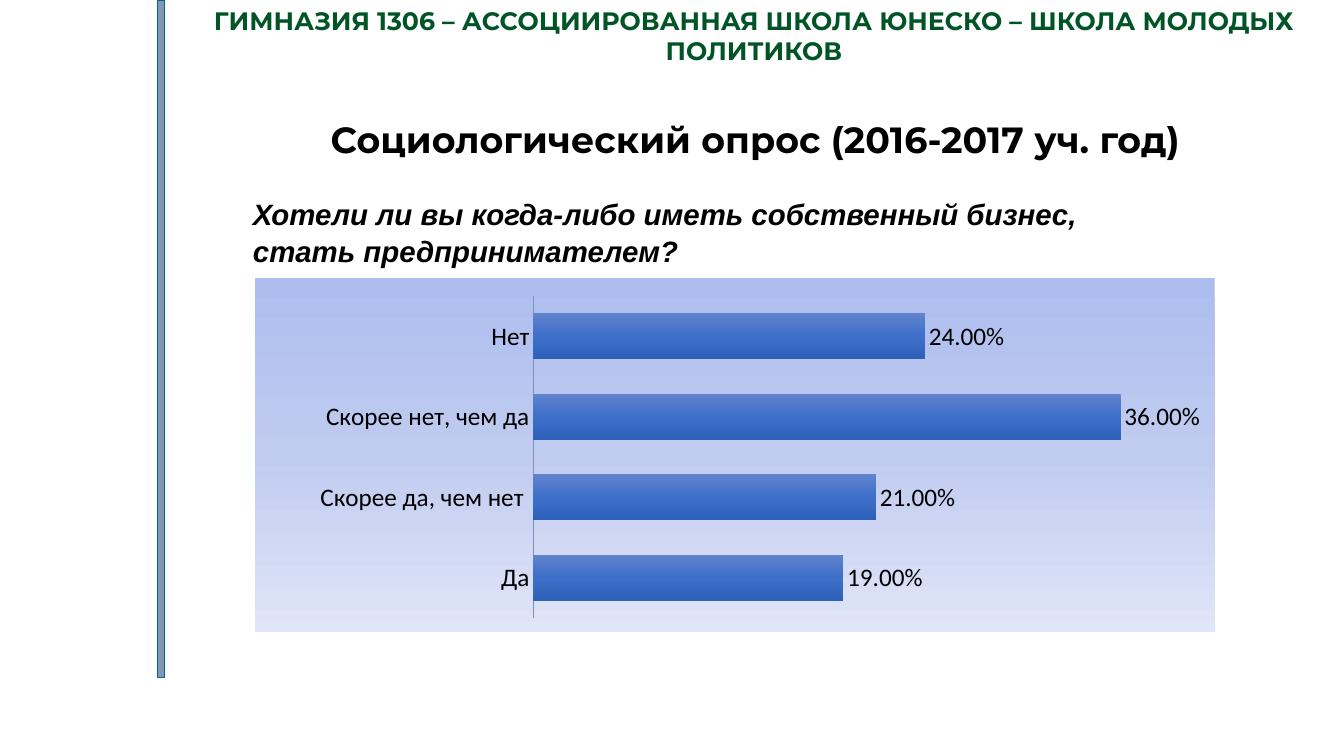
from lxml.etree import SubElement
from pptx import Presentation
from pptx.chart.data import CategoryChartData
from pptx.dml.color import RGBColor
from pptx.enum.chart import XL_CHART_TYPE, XL_LABEL_POSITION, XL_TICK_MARK
from pptx.enum.shapes import MSO_SHAPE
from pptx.enum.text import MSO_ANCHOR, MSO_AUTO_SIZE, PP_ALIGN
from pptx.oxml import parse_xml
from pptx.oxml.ns import nsdecls, qn
from pptx.util import Cm, Pt

BLACK = RGBColor(0x00, 0x00, 0x00)
GREEN = RGBColor(0x00, 0x54, 0x26)
STRIPE_FILL = RGBColor(0x84, 0x97, 0xB0)
STRIPE_LINE = RGBColor(0x00, 0x66, 0x99)
AXIS_LINE = RGBColor(0x7F, 0x8F, 0xBF)
CHART_GRADIENT = (
    RGBColor(0xAD, 0xBD, 0xEE),
    RGBColor(0xC0, 0xCB, 0xF0),
    RGBColor(0xE0, 0xE5, 0xF7),
)
BAR_GRADIENT = (
    RGBColor(0x60, 0x83, 0xCB),
    RGBColor(0x3E, 0x70, 0xCA),
    RGBColor(0x2E, 0x61, 0xBA),
)

ANSWERS = {
    "Да": 0.19,
    "Скорее да, чем нет ": 0.21,
    "Скорее нет, чем да": 0.36,
    "Нет": 0.24,
}


def place(sp, left, top, width, height):
    sp.left, sp.top, sp.width, sp.height = Cm(left), Cm(top), Cm(width), Cm(height)


def write(sp, text, font, size, color, align, spacing, italic=False):
    tf = sp.text_frame
    tf.text = text
    tf.word_wrap = True
    tf.auto_size = MSO_AUTO_SIZE.NONE
    tf.vertical_anchor = MSO_ANCHOR.TOP
    for i, p in enumerate(tf.paragraphs):
        p.alignment = align
        p.line_spacing = spacing
        p.space_before = Pt(6 if i else 0)
        for r in p.runs:
            r.font.name = font
            r.font.size = Pt(size)
            r.font.bold = True
            r.font.italic = italic
            r.font.color.rgb = color


def remove_bullets(sp):
    for p in sp.text_frame.paragraphs:
        pPr = p._p.get_or_add_pPr()
        pPr.set("marL", "0")
        pPr.set("indent", "0")
        SubElement(pPr, qn("a:buNone"))


def add_stripe(slide):
    sp = slide.shapes.add_shape(MSO_SHAPE.RECTANGLE, Cm(3.97), Cm(0), Cm(0.18), Cm(17.07))
    sp.shadow.inherit = False
    sp.fill.solid()
    sp.fill.fore_color.rgb = STRIPE_FILL
    sp.line.color.rgb = STRIPE_LINE
    sp.line.width = Pt(1)


def gradient_properties(colors):
    stops = "".join(
        f'<a:gs pos="{i * 50000}"><a:srgbClr val="{color}"/></a:gs>'
        for i, color in enumerate(colors)
    )
    return parse_xml(
        f'<c:spPr {nsdecls("c", "a")}><a:gradFill rotWithShape="1"><a:gsLst>{stops}</a:gsLst>'
        '<a:lin ang="5400000" scaled="0"/></a:gradFill><a:ln><a:noFill/></a:ln></c:spPr>'
    )


def set_plot_layout(chart, x, y, w, h):
    plot_area = chart._chartSpace.find(".//" + qn("c:plotArea"))
    for old in plot_area.findall(qn("c:layout")):
        plot_area.remove(old)
    sizes = "".join(f'<c:{k} val="{v}"/>' for k, v in zip("xywh", (x, y, w, h)))
    plot_area.insert(0, parse_xml(
        f'<c:layout {nsdecls("c")}><c:manualLayout><c:layoutTarget val="inner"/>'
        f'<c:xMode val="edge"/><c:yMode val="edge"/>{sizes}</c:manualLayout></c:layout>'
    ))


def add_survey_chart(slide):
    data = CategoryChartData(number_format="0.00%")
    data.categories = list(ANSWERS)
    data.add_series("Series 1", list(ANSWERS.values()))
    chart = slide.shapes.add_chart(
        XL_CHART_TYPE.BAR_CLUSTERED, Cm(6.43), Cm(7.01), Cm(24.18), Cm(8.92), data
    ).chart
    chart.has_title = False
    chart.has_legend = False
    chart.font.name = "Calibri"
    chart.font.size = Pt(18)
    chart.font.color.rgb = BLACK

    cat_axis = chart.category_axis
    cat_axis.major_tick_mark = XL_TICK_MARK.NONE
    cat_axis.format.line.color.rgb = AXIS_LINE
    cat_axis.format.line.width = Pt(0.75)
    val_axis = chart.value_axis
    val_axis.visible = False
    val_axis.has_major_gridlines = False
    val_axis.minimum_scale = 0
    val_axis.maximum_scale = 0.4

    plot = chart.plots[0]
    plot.gap_width = 75
    plot.vary_by_categories = False
    plot.has_data_labels = True
    labels = plot.data_labels
    labels.show_value = True
    labels.number_format = "0.00%"
    labels.number_format_is_linked = False
    labels.position = XL_LABEL_POSITION.OUTSIDE_END

    series = plot.series[0]
    series.format.fill.solid()
    spPr = series._element.find(qn("c:spPr"))
    series._element.replace(spPr, gradient_properties(BAR_GRADIENT))
    chart._chartSpace.find(qn("c:chart")).addnext(gradient_properties(CHART_GRADIENT))
    set_plot_layout(chart, 0.29, 0.05, 0.68, 0.91)


def main():
    prs = Presentation()
    prs.slide_width, prs.slide_height = Cm(33.87), Cm(19.05)
    slide = prs.slides.add_slide(prs.slide_layouts[1])

    header = slide.shapes.add_textbox(Cm(4.14), Cm(0), Cm(29.72), Cm(1.8))
    write(header, "ГИМНАЗИЯ 1306 – АССОЦИИРОВАННАЯ ШКОЛА ЮНЕСКО – ШКОЛА МОЛОДЫХ ПОЛИТИКОВ",
          "Montserrat", 18, GREEN, PP_ALIGN.CENTER, 1.0)
    add_stripe(slide)

    title = slide.shapes.title
    place(title, 4.22, 2.95, 29.65, 1.47)
    write(title, "Социологический опрос (2016-2017 уч. год)",
          "Montserrat", 26, BLACK, PP_ALIGN.CENTER, 0.9)

    question = slide.placeholders[1]
    place(question, 6.12, 5, 26, 1.9)
    write(question, "Хотели ли вы когда-либо иметь собственный бизнес,\nстать предпринимателем?",
          "Arial", 21, BLACK, PP_ALIGN.LEFT, Pt(20), italic=True)
    remove_bullets(question)

    add_survey_chart(slide)
    prs.save("out.pptx")


if __name__ == "__main__":
    main()
